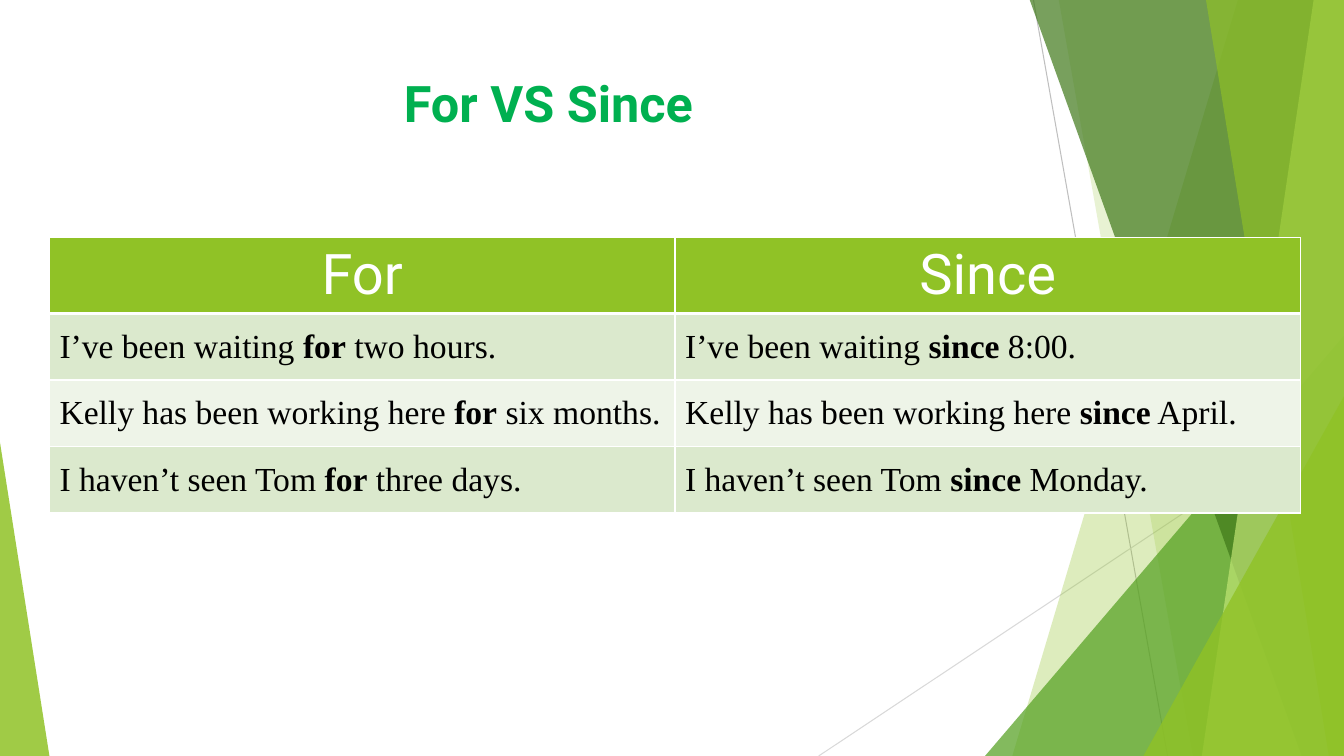
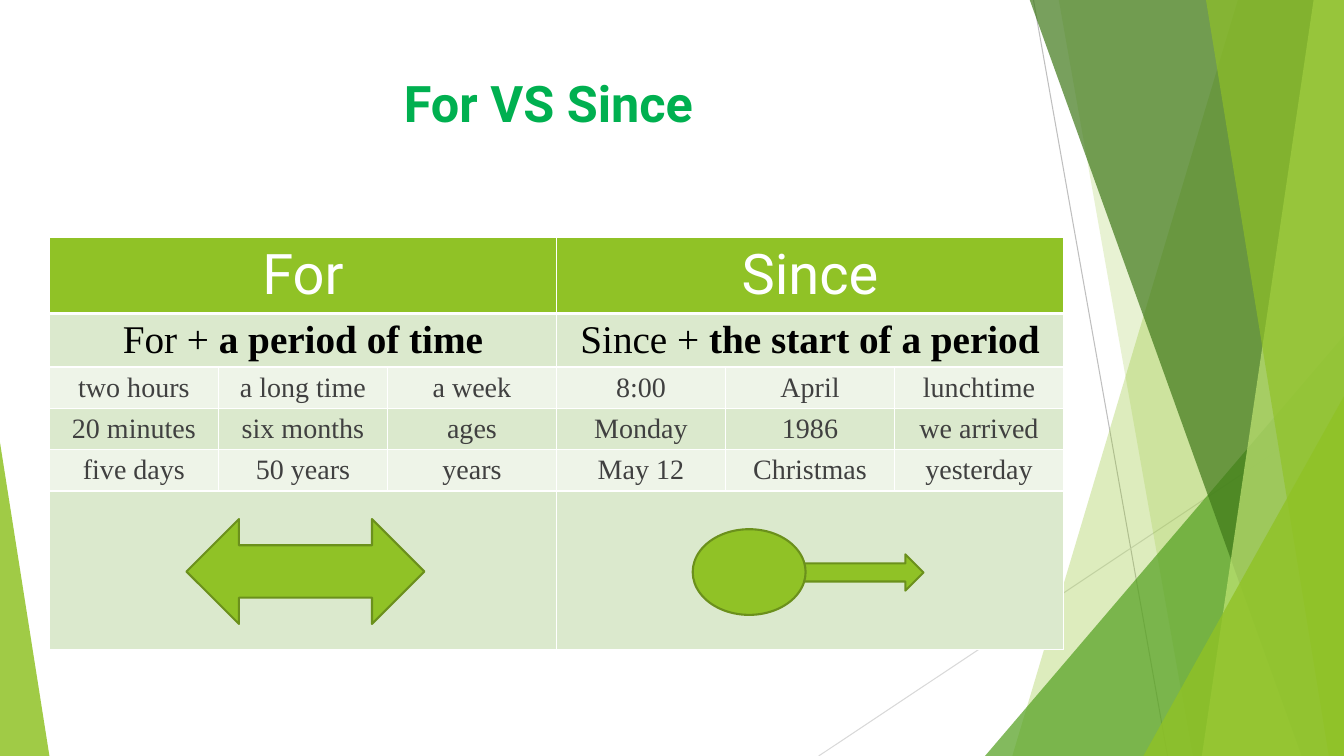
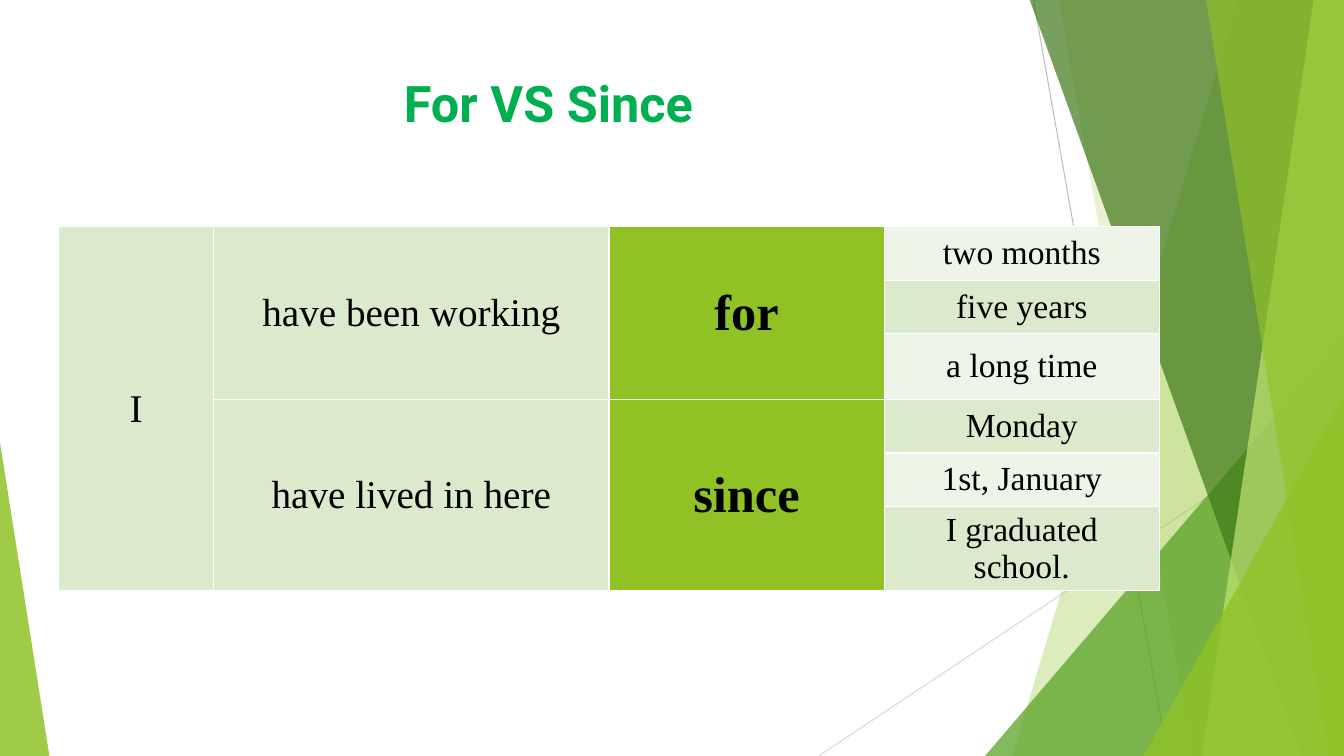
from dataclasses import dataclass

from lxml.etree import SubElement
from pptx import Presentation
from pptx.dml.color import RGBColor
from pptx.enum.shapes import MSO_CONNECTOR, MSO_SHAPE
from pptx.enum.text import MSO_ANCHOR, PP_ALIGN
from pptx.oxml.ns import qn
from pptx.util import Inches, Pt

WIDTH, HEIGHT = 13.33, 7.5
TOP_EDGE = -0.01
SANS, SERIF = "Roboto", "Times New Roman"
GREEN, OUTLINE, TITLE_GREEN = "90C226", "6B901C", "00B050"
PALE, MIST = "DBE9CD", "EEF4E8"
BLACK, WHITE, GREY = "000000", "FFFFFF", "404040"


@dataclass(frozen=True)
class Ray:
    start: tuple[float, float]
    end: tuple[float, float]
    color: str


@dataclass(frozen=True)
class Band:
    top_left: float
    bottom_left: float
    color: str
    opacity: int


@dataclass(frozen=True)
class Triangle:
    left: float
    top: float
    width: float
    apex: float
    color: str
    opacity: int


@dataclass(frozen=True)
class Figure:
    kind: MSO_SHAPE
    left: float
    top: float
    width: float
    height: float


@dataclass(frozen=True)
class TextStyle:
    size: int
    font: str = SERIF
    color: str = BLACK
    bold: bool = False
    alignment: PP_ALIGN = PP_ALIGN.CENTER


@dataclass(frozen=True)
class Entry:
    row: int
    column: int
    text: str
    style: TextStyle
    fill: str = ""
    rows: int = 1
    columns: int = 1


@dataclass(frozen=True)
class Grid:
    left: float
    top: float
    columns: list[float]
    rows: list[float]
    entries: list[Entry]
    header: bool = True


RAYS = [
    Ray((10.25, 0), (11.58, HEIGHT), "BFBFBF"),
    Ray((WIDTH, 4.03), (8.12, HEIGHT), "D9D9D9"),
]
PANELS = [
    Band(12.28, 10.04, GREEN, 30),
    Band(10.5, 11.83, GREEN, 20),
    Triangle(9.77, 3.33, 3.56, 1, "54A021", 72),
    Band(10.21, 12.91, "3F7819", 70),
    Band(13.03, 11.92, "C0E474", 70),
    Band(11.96, 13.18, GREEN, 65),
    Triangle(11.34, 3.93, 1.99, 1, GREEN, 80),
    Triangle(0, 4.39, 0.49, 0, GREEN, 85),
]
HEADING = TextStyle(40, SANS, WHITE)
SENTENCE = TextStyle(24, alignment=PP_ALIGN.LEFT)
RULE = TextStyle(28)
EXAMPLE = TextStyle(20, color=GREY)
KEYWORD = TextStyle(36, bold=True)
ENDING = TextStyle(24)

SENTENCES = [
    ("I’ve been waiting *for* two hours.", "I’ve been waiting *since* 8:00."),
    ("Kelly has been working here *for* six months.", "Kelly has been working here *since* April."),
    ("I haven’t seen Tom *for* three days.", "I haven’t seen Tom *since* Monday."),
]
EXAMPLES = [
    ("two hours", "a long time", "a week", "8:00", "April", "lunchtime"),
    ("20 minutes", "six months", "ages", "Monday", "1986", "we arrived"),
    ("five days", "50 years", "years", "May 12", "Christmas", "yesterday"),
]
ENDINGS = ["two months", "five years", "a long time", "Monday", "1st, January", "I graduated school."]
FIGURES = [
    Figure(MSO_SHAPE.LEFT_RIGHT_ARROW, 1.85, 5.15, 2.36, 1.04),
    Figure(MSO_SHAPE.RIGHT_ARROW, 7.7, 5.5, 1.46, 0.36),
    Figure(MSO_SHAPE.OVAL, 6.87, 5.25, 1.12, 0.85),
]


def rgb(color: str) -> RGBColor:
    return RGBColor.from_string(color)


def paint(shape, color: str, opacity: int = 100) -> None:
    shape.shadow.inherit = False
    shape.fill.solid()
    shape.fill.fore_color.rgb = rgb(color)
    if opacity < 100:
        fill_color = shape.element.spPr.find(f"{qn('a:solidFill')}/{qn('a:srgbClr')}")
        SubElement(fill_color, qn("a:alpha"), val=str(opacity * 1000))
    shape.line.fill.background()


def draw_ray(slide, ray: Ray):
    points = [Inches(value) for value in (*ray.start, *ray.end)]
    connector = slide.shapes.add_connector(MSO_CONNECTOR.STRAIGHT, *points)
    connector.line.color.rgb = rgb(ray.color)
    connector.line.width = Pt(0.75)
    SubElement(connector.element.spPr, qn("a:effectLst"))
    return connector


def draw_panel(slide, panel: Band | Triangle):
    if isinstance(panel, Band):
        builder = slide.shapes.build_freeform(Inches(panel.top_left), Inches(TOP_EDGE))
        corners = [(WIDTH, TOP_EDGE), (WIDTH, HEIGHT), (panel.bottom_left, HEIGHT)]
        builder.add_line_segments([(Inches(x), Inches(y)) for x, y in corners])
        shape = builder.convert_to_shape()
    else:
        shape = slide.shapes.add_shape(
            MSO_SHAPE.ISOSCELES_TRIANGLE, Inches(panel.left), Inches(panel.top),
            Inches(panel.width), Inches(HEIGHT - panel.top))
        shape.adjustments[0] = panel.apex
    paint(shape, panel.color, panel.opacity)
    return shape


def decorate_layout(layout, slide) -> None:
    shapes = [draw_ray(slide, ray) for ray in RAYS]
    shapes += [draw_panel(slide, panel) for panel in PANELS]
    for shape in shapes:
        layout.shapes.element.append(shape.element)


def format_runs(paragraph, style: TextStyle) -> None:
    paragraph.alignment = style.alignment
    for run in paragraph.runs:
        run.font.name = style.font
        run.font.size = Pt(style.size)
        run.font.color.rgb = rgb(style.color)


def set_title(slide) -> None:
    title = slide.shapes.title
    title.left, title.top = Inches(0.74), Inches(0.67)
    title.width, title.height = Inches(9.4), Inches(1.44)
    title.text_frame.text = "For VS Since"
    title.text_frame.vertical_anchor = MSO_ANCHOR.TOP
    paragraph = title.text_frame.paragraphs[0]
    format_runs(paragraph, TextStyle(36, SANS, TITLE_GREEN))
    paragraph.runs[0].font.bold = True


def set_borders(cell, top: float, bottom: float) -> None:
    properties = cell._tc.get_or_add_tcPr()
    for side, points in (("L", 1), ("R", 1), ("T", top), ("B", bottom)):
        line = SubElement(properties, qn(f"a:ln{side}"), w=str(Pt(points)))
        fill = SubElement(line, qn("a:solidFill"))
        SubElement(fill, qn("a:srgbClr"), val=WHITE)


def fill_entry(table, entry: Entry) -> None:
    last_row, last_column = entry.row + entry.rows, entry.column + entry.columns
    for row in range(entry.row, last_row):
        for column in range(entry.column, last_column):
            cell = table.cell(row, column)
            cell.fill.solid()
            cell.fill.fore_color.rgb = rgb(entry.fill or (MIST, PALE)[entry.row % 2])
    cell = table.cell(entry.row, entry.column)
    if entry.rows * entry.columns > 1:
        cell.merge(table.cell(last_row - 1, last_column - 1))
    cell.vertical_anchor = MSO_ANCHOR.MIDDLE
    paragraph = cell.text_frame.paragraphs[0]
    for index, part in enumerate(entry.text.split("*")):
        if part:
            run = paragraph.add_run()
            run.text = part
            run.font.bold = entry.style.bold or index % 2 == 1
    format_runs(paragraph, entry.style)


def draw_grid(slide, grid: Grid) -> None:
    frame = slide.shapes.add_table(
        len(grid.rows), len(grid.columns), Inches(grid.left), Inches(grid.top),
        Inches(sum(grid.columns)), Inches(sum(grid.rows)))
    table = frame.table
    table.first_row = table.horz_banding = False
    for column, width in zip(table.columns, grid.columns):
        column.width = Inches(width)
    for index, height in enumerate(grid.rows):
        table.rows[index].height = Inches(height)
        top = 3 if grid.header and index == 1 else 1
        bottom = 3 if grid.header and index == 0 else 1
        for cell in table.rows[index].cells:
            set_borders(cell, top, bottom)
    for entry in grid.entries:
        fill_entry(table, entry)


def draw_figure(slide, figure: Figure) -> None:
    shape = slide.shapes.add_shape(
        figure.kind, Inches(figure.left), Inches(figure.top),
        Inches(figure.width), Inches(figure.height))
    paint(shape, GREEN)
    shape.line.color.rgb = rgb(OUTLINE)
    shape.line.width = Pt(1.5)


def pair(row: int, texts: tuple[str, str], style: TextStyle, span: int = 1, fill: str = "") -> list[Entry]:
    return [Entry(row, index * span, text, style, fill, columns=span) for index, text in enumerate(texts)]


def sentence_grid() -> Grid:
    entries = pair(0, ("For", "Since"), HEADING, fill=GREEN)
    for row, texts in enumerate(SENTENCES, 1):
        entries += pair(row, texts, SENTENCE)
    return Grid(0.49, 2.36, [12.41 / 2] * 2, [0.75] + [0.66] * 3, entries)


def period_grid() -> Grid:
    entries = pair(0, ("For", "Since"), HEADING, 3, GREEN)
    entries += pair(1, ("For + *a period of time*", "Since + *the start of a period*"), RULE, 3)
    for row, texts in enumerate(EXAMPLES, 2):
        entries += [Entry(row, column, text, EXAMPLE) for column, text in enumerate(texts)]
    entries += pair(5, ("", ""), RULE, 3)
    return Grid(0.49, 2.36, [10.06 / 6] * 6, [0.75, 0.53] + [0.41] * 3 + [1.57], entries)


def pattern_grid() -> Grid:
    entries = [Entry(0, 0, "I", RULE, PALE, rows=6)]
    for row, phrase, keyword in ((0, "have been working", "for"), (3, "have lived in here", "since")):
        entries.append(Entry(row, 1, phrase, RULE, PALE, rows=3))
        entries.append(Entry(row, 2, keyword, KEYWORD, GREEN, rows=3))
    entries += [Entry(row, 3, text, ENDING) for row, text in enumerate(ENDINGS)]
    return Grid(0.58, 2.25, [1.54, 3.92, 2.73, 2.73], [0.53, 0.53, 0.65, 0.53, 0.53, 0.83], entries, False)


def main() -> None:
    presentation = Presentation()
    presentation.slide_width, presentation.slide_height = Inches(WIDTH), Inches(HEIGHT)
    layout = presentation.slide_layouts[5]
    slides = [presentation.slides.add_slide(layout) for _ in range(3)]
    decorate_layout(layout, slides[0])
    for slide, grid in zip(slides, (sentence_grid(), period_grid(), pattern_grid())):
        set_title(slide)
        draw_grid(slide, grid)
    for figure in FIGURES:
        draw_figure(slides[1], figure)
    presentation.save("out.pptx")


if __name__ == "__main__":
    main()
